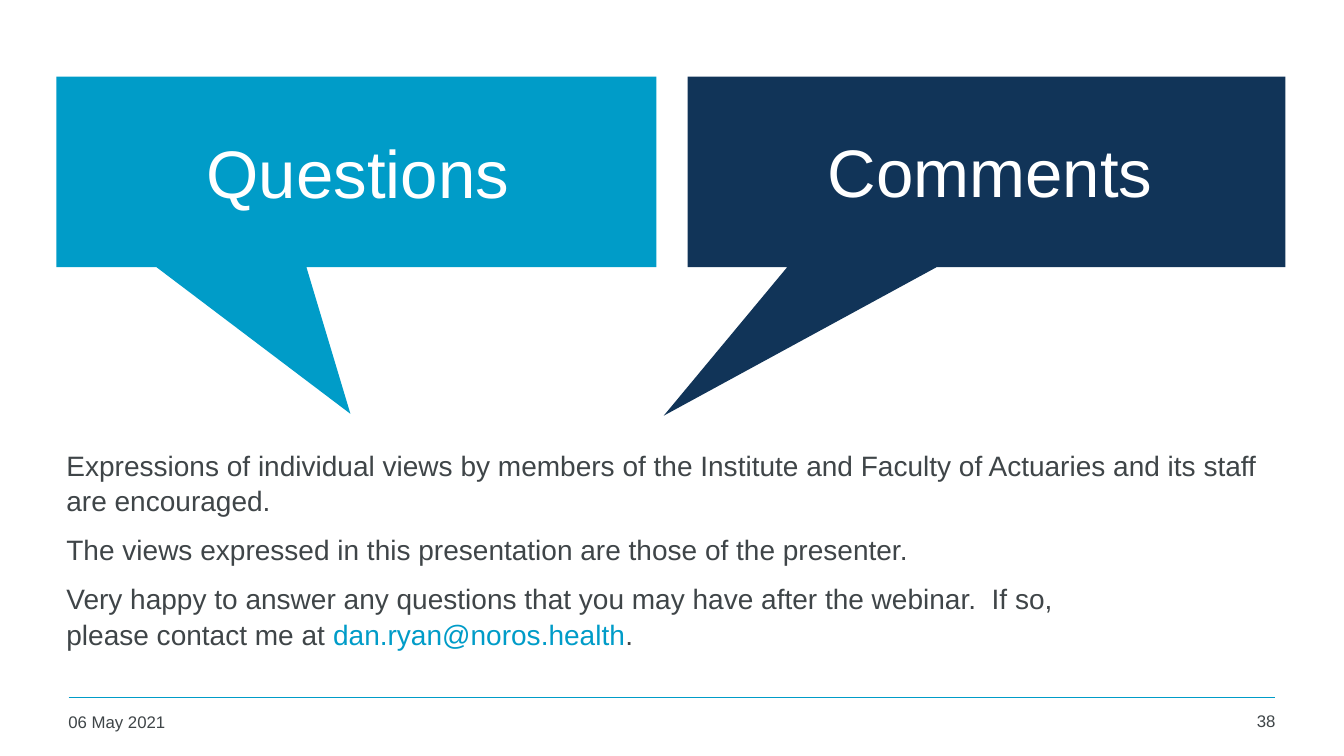
import pptx
import pptx.util
import pptx.dml.color
import pptx.enum.shapes
import pptx.enum.text
import pptx.oxml

Inches = pptx.util.Inches
Pt = pptx.util.Pt
RGBColor = pptx.dml.color.RGBColor
ALIGN = pptx.enum.text.PP_ALIGN
ANCHOR = pptx.enum.text.MSO_ANCHOR

CYAN = RGBColor(0x00, 0x9C, 0xC8)
NAVY = RGBColor(0x11, 0x34, 0x58)
GREY = RGBColor(0x3F, 0x45, 0x48)
WHITE = RGBColor(0xFF, 0xFF, 0xFF)

HEADING = {"size": Pt(48), "color": WHITE}
BODY = {"size": Pt(20), "color": GREY}
FOOTER = {"size": Pt(12), "color": GREY}

# Each paragraph is a list of (text, format changes) runs.
MESSAGE = [
    [("Expressions of individual views by members of the Institute and "
      "Faculty of Actuaries and its staff are encouraged.", {})],
    [("The views expressed in this presentation are those of the presenter.", {})],
    [("Very happy to answer any questions that you may have after the webinar.  If so,", {}),
     ("\n", {}),
     ("please contact me at ", {}),
     ("dan.ryan@noros.health", {"color": CYAN}),
     (".", {})],
]


def add_run(p, text, size, color):
    r = p.add_run()
    r.text = text
    for name, value in {"name": "Arial", "size": size, "bold": False}.items():
        setattr(r.font, name, value)
    r.font.color.rgb = color


def fill_text(sp, paragraphs, style, align=ALIGN.LEFT, anchor=ANCHOR.TOP, line_spacing=1.0):
    tf = sp.text_frame
    frame = {"word_wrap": True, "vertical_anchor": anchor,
             "auto_size": pptx.enum.text.MSO_AUTO_SIZE.NONE}
    for name, value in frame.items():
        setattr(tf, name, value)
    for i, runs in enumerate(paragraphs):
        p = tf.add_paragraph() if i else tf.paragraphs[0]
        layout = {"alignment": align, "line_spacing": line_spacing,
                  "space_before": Pt(10 if i else 0)}
        for name, value in layout.items():
            setattr(p, name, value)
        for text, changes in runs:
            if text == "\n":
                p.add_line_break()
            else:
                add_run(p, text, **{**style, **changes})


def add_text(s, box, paragraphs, style, **layout):
    sp = s.shapes.add_textbox(*map(Inches, box))
    fill_text(sp, paragraphs, style, **layout)


def add_callout(s, box, tip, color):
    """Add a speech bubble; tip is its point as a share of the size from the centre."""
    sp = s.shapes.add_shape(
        pptx.enum.shapes.MSO_SHAPE.RECTANGULAR_CALLOUT, *map(Inches, box))
    sp.shadow.inherit = False
    sp.fill.solid()
    sp.fill.fore_color.rgb = color
    sp.line.fill.background()
    for i, value in enumerate(tip):
        sp.adjustments[i] = value


def add_title(s, box, text):
    title = s.shapes.title
    for name, value in zip(("left", "top", "width", "height"), box):
        setattr(title, name, Inches(value))
    fill_text(title, [[(text, {})]], HEADING, ALIGN.CENTER, ANCHOR.MIDDLE)
    # The title lies in front of its callout.
    s.shapes.element.append(title.element)


def add_rule(s, left, right, y):
    line = s.shapes.add_connector(
        pptx.enum.shapes.MSO_CONNECTOR.STRAIGHT,
        Inches(left), Inches(y), Inches(right), Inches(y))
    line.line.color.rgb = CYAN
    line.line.width = Pt(1)
    sp_pr = line.element.spPr
    sp_pr.append(sp_pr.makeelement(pptx.oxml.ns.qn("a:effectLst")))


def main():
    prs = pptx.Presentation()
    prs.slide_width = Inches(13.33)
    prs.slide_height = Inches(7.5)
    s = prs.slides.add_slide(prs.slide_layouts[5])

    add_rule(s, 0.68, 12.65, 6.92)
    add_text(s, (0.58, 7.01, 2.94, 0.36), [[("06 May 2021", {})]], FOOTER)
    add_text(s, (11.81, 7, 0.94, 0.37), [[("38", {})]], FOOTER, align=ALIGN.RIGHT)
    add_text(s, (0.56, 4.38, 12.02, 2.58), MESSAGE, BODY, line_spacing=1.05)

    add_callout(s, (0.56, 0.76, 5.95, 1.89), (-0.01, 1.27), CYAN)
    add_callout(s, (6.82, 0.76, 5.93, 1.89), (-0.54, 1.28), NAVY)
    add_title(s, (0.83, 1.08, 5.44, 1.25), "Questions")
    add_text(s, (7.06, 1.07, 5.52, 1.25), [[("Comments", {})]], HEADING,
             align=ALIGN.CENTER, anchor=ANCHOR.MIDDLE)

    prs.save("out.pptx")


if __name__ == "__main__":
    main()
